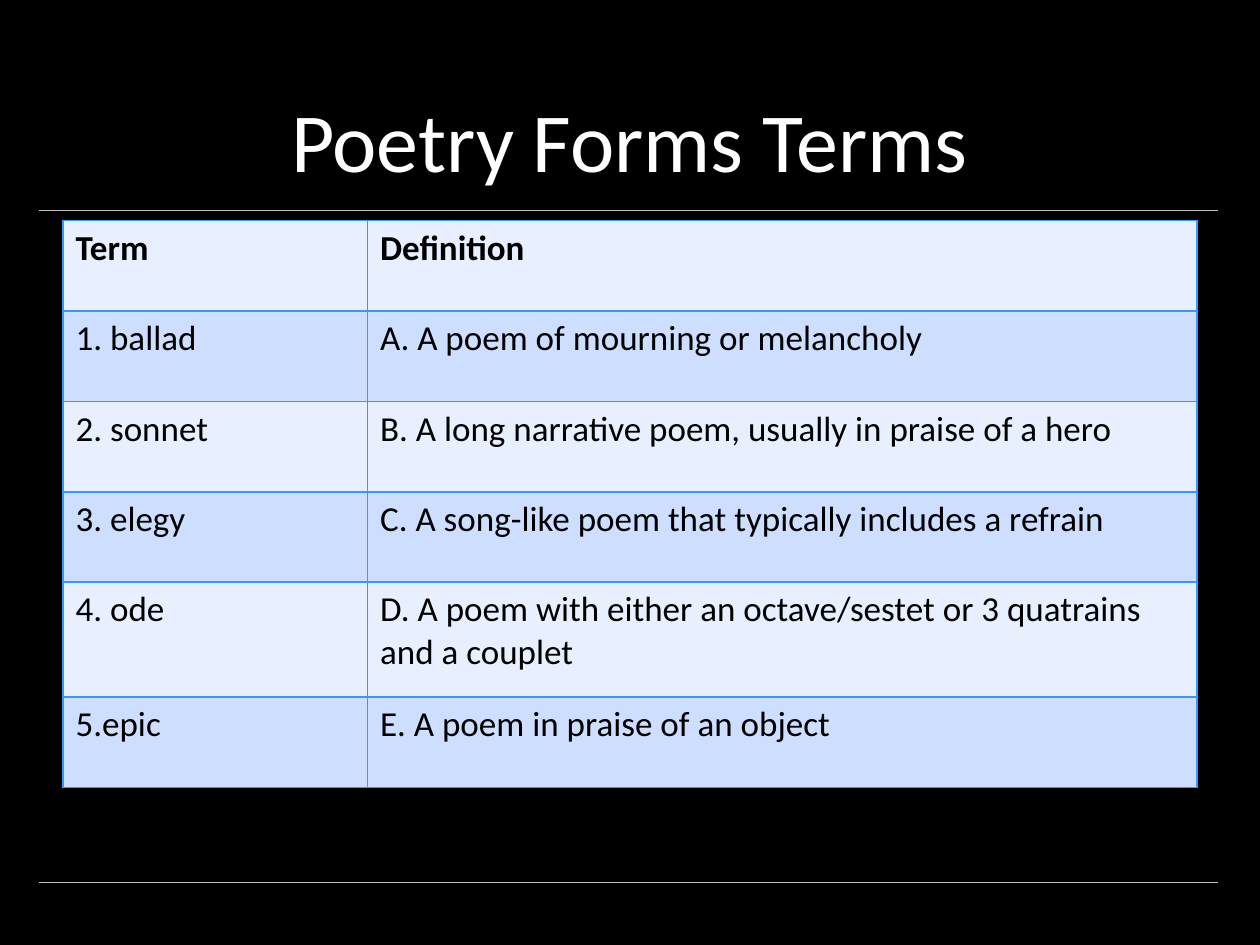
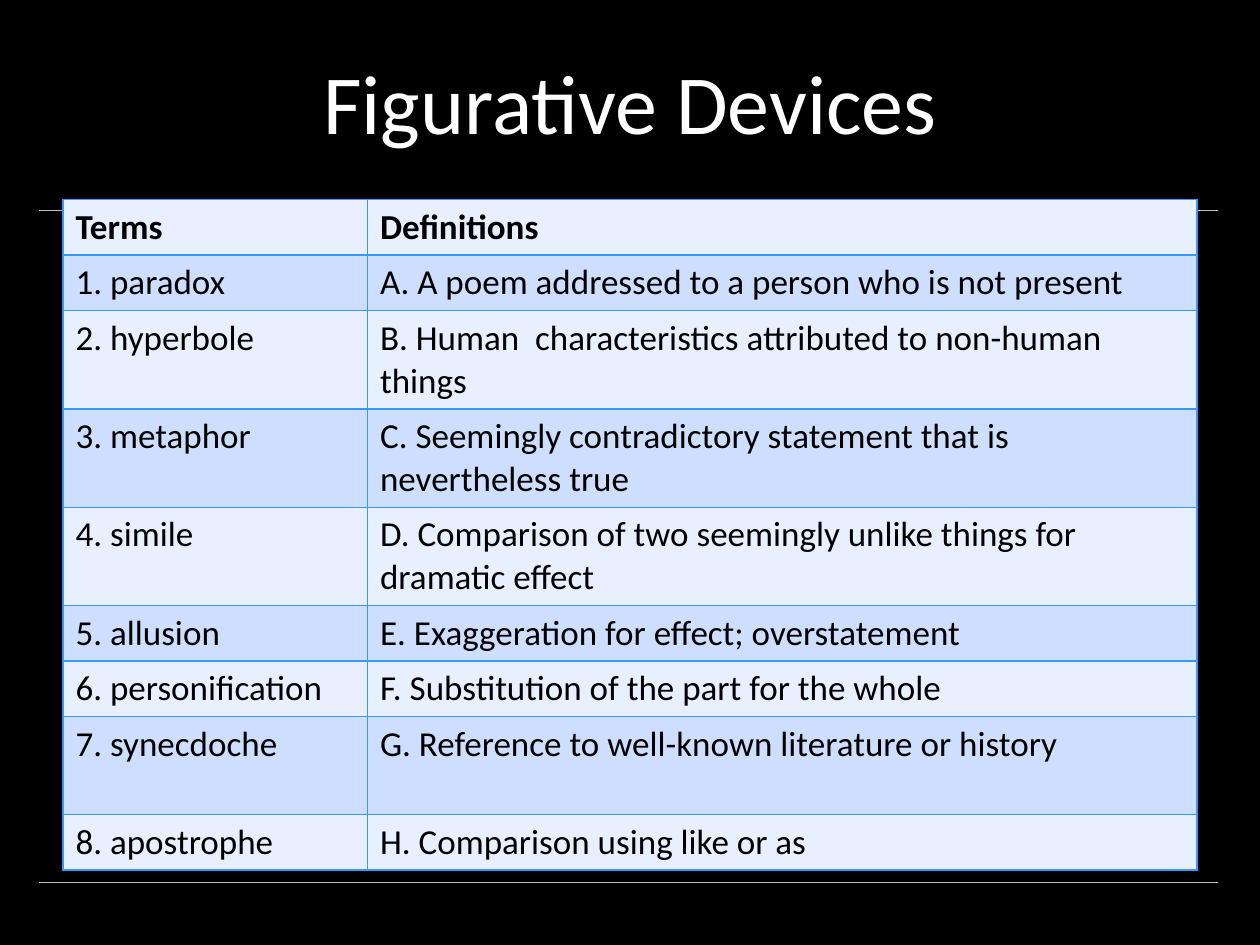
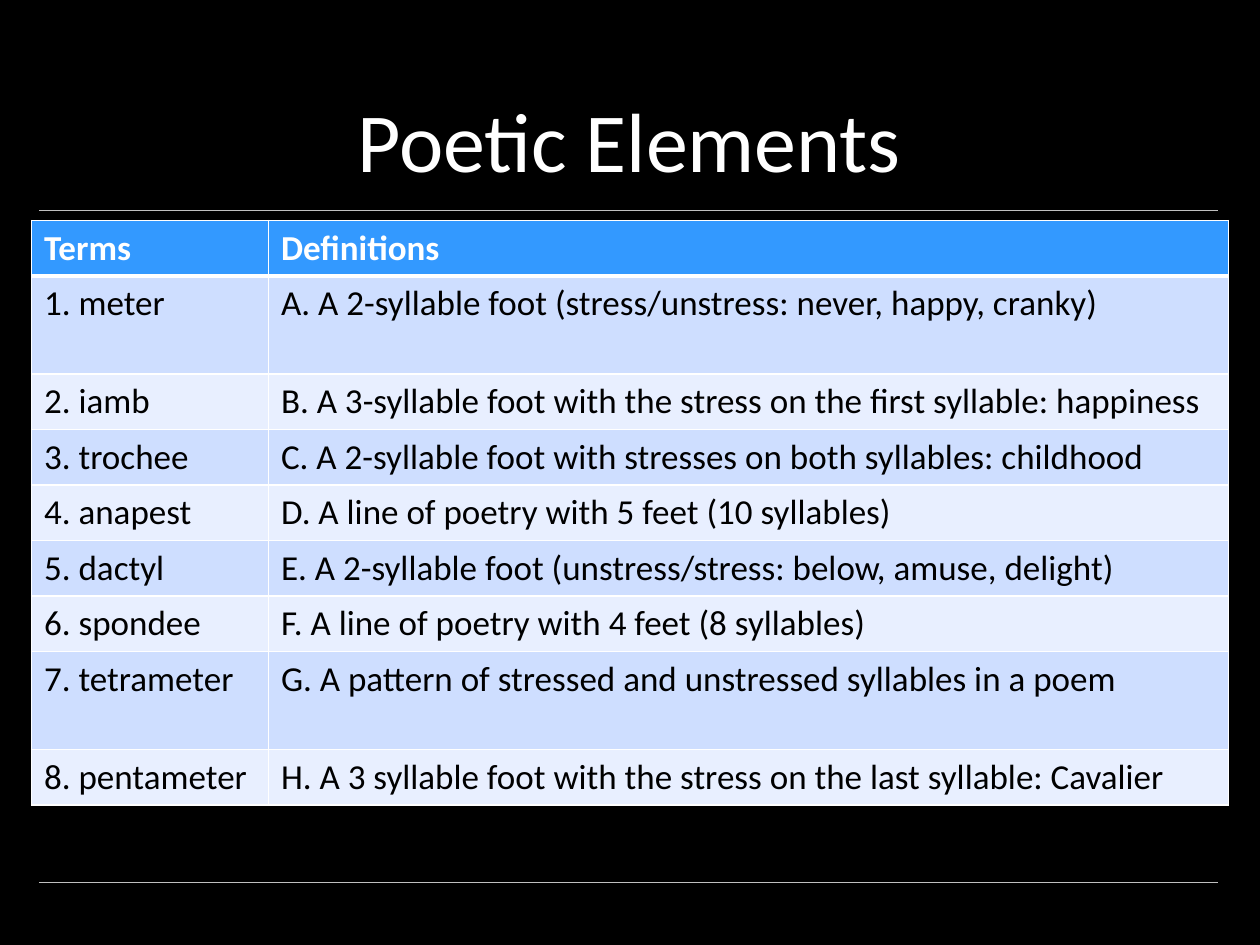
import dataclasses

import pptx
import pptx.dml.color
import pptx.enum.shapes
import pptx.enum.text
import pptx.oxml
import pptx.oxml.ns
import pptx.util
from lxml import etree

Pt = pptx.util.Pt
RGB = pptx.dml.color.RGBColor.from_string


@dataclasses.dataclass(frozen=True)
class Theme:
    font: str = "Calibri"
    title_size: int = 48
    cell_size: int = 20
    background: str = "000000"
    title: str = "FFFFFF"
    rule: str = "BFBFBF"
    text: str = "000000"
    light: str = "E8EFFF"
    mid: str = "CEDEFF"
    accent: str = "3399FF"
    white: str = "FFFFFF"


# Row heights and boxes in points; boxes are left, top, width, height
ONE_LINE, TWO_LINES = 31.7, 56
ROOMY, ROOMY_TWO_LINES = 51.7, 65.5
TITLE_BOX = (50.4, 8.64, 618.5, 103)
HIGH_TITLE_BOX = (36, 0, 648, 90)
RULE_LEFT, RULE_RIGHT = 22.3, 696.2
RULE_TOPS = (120.2, 504)

POETRY_FORMS = [
    ("Term", "Definition"),
    ("1. ballad", "A. A poem of mourning or melancholy"),
    ("2. sonnet", "B. A long narrative poem, usually in praise of a hero"),
    ("3. elegy", "C. A song-like poem that typically includes a refrain"),
    ("4. ode", "D. A poem with either an octave/sestet or 3 quatrains and a couplet"),
    ("5.epic", "E. A poem in praise of an object"),
]
FIGURATIVE_DEVICES = [
    ("Terms", "Definitions"),
    ("1. paradox", "A. A poem addressed to a person who is not present"),
    ("2. hyperbole", "B. Human  characteristics attributed to non-human things"),
    ("3. metaphor", "C. Seemingly contradictory statement that is nevertheless true"),
    ("4. simile", "D. Comparison of two seemingly unlike things for dramatic effect"),
    ("5. allusion", "E. Exaggeration for effect; overstatement"),
    ("6. personification", "F. Substitution of the part for the whole"),
    ("7. synecdoche", "G. Reference to well-known literature or history"),
    ("8. apostrophe", "H. Comparison using like or as"),
]
POETIC_ELEMENTS = [
    ("Terms", "Definitions"),
    ("1. meter", "A. A 2-syllable foot (stress/unstress: never, happy, cranky)"),
    ("2. iamb", "B. A 3-syllable foot with the stress on the first syllable: happiness"),
    ("3. trochee", "C. A 2-syllable foot with stresses on both syllables: childhood"),
    ("4. anapest", "D. A line of poetry with 5 feet (10 syllables)"),
    ("5. dactyl", "E. A 2-syllable foot (unstress/stress: below, amuse, delight)"),
    ("6. spondee", "F. A line of poetry with 4 feet (8 syllables)"),
    ("7. tetrameter", "G. A pattern of stressed and unstressed syllables in a poem"),
    ("8. pentameter", "H. A 3 syllable foot with the stress on the last syllable: Cavalier"),
]


class Deck:
    def __init__(self, theme):
        self.theme = theme
        self.slide = None
        self.prs = pptx.Presentation()
        self.prs.slide_width, self.prs.slide_height = Pt(720), Pt(540)
        fill = self.prs.slide_master.background.fill
        fill.solid()
        fill.fore_color.rgb = RGB(theme.background)

    def add_slide(self, title, box=TITLE_BOX):
        self.slide = self.prs.slides.add_slide(self.prs.slide_layouts[5])
        for top in RULE_TOPS:
            self.rule(top)
        self.title(title, box)

    def title(self, text, box):
        sp = self.slide.shapes.title
        sp.left, sp.top, sp.width, sp.height = map(Pt, box)
        tf = sp.text_frame
        tf.text = text
        tf.vertical_anchor = pptx.enum.text.MSO_ANCHOR.BOTTOM
        p = tf.paragraphs[0]
        p.alignment = pptx.enum.text.PP_ALIGN.CENTER
        self.style(p, self.theme.title_size, self.theme.title)

    def rule(self, top):
        line = self.slide.shapes.add_connector(
            pptx.enum.shapes.MSO_CONNECTOR.STRAIGHT,
            Pt(RULE_LEFT), Pt(top), Pt(RULE_RIGHT), Pt(top))
        line.line.color.rgb = RGB(self.theme.rule)
        line.line.width = Pt(0.25)
        sp_pr = line.element.find(pptx.oxml.ns.qn("p:spPr"))
        etree.SubElement(sp_pr, pptx.oxml.ns.qn("a:effectLst"))

    def style(self, p, size, color, bold=False):
        p.font.name = self.theme.font
        p.font.size = Pt(size)
        p.font.bold = bold
        p.font.color.rgb = RGB(color)

    def table(self, rows, left, top, widths, heights, border, solid_header=False):
        """Draw a two-tone table; solid_header gives the first row the accent fill."""
        theme = self.theme
        table = self.slide.shapes.add_table(
            len(rows), len(widths), Pt(left), Pt(top),
            Pt(sum(widths)), Pt(sum(heights))).table
        table.first_row = table.horz_banding = False
        for column, width in zip(table.columns, widths):
            column.width = Pt(width)
        for i, (row, height, texts) in enumerate(zip(table.rows, heights, rows)):
            row.height = Pt(height)
            accented = solid_header and i == 0
            fill = theme.accent if accented else (theme.light, theme.mid)[i % 2]
            color = theme.white if accented else theme.text
            edges = {"L": 1, "R": 1,
                     "T": 3 if solid_header and i == 1 else 1,
                     "B": 3 if accented else 1}
            for cell, text in zip(row.cells, texts):
                cell.text = text
                self.style(cell.text_frame.paragraphs[0], theme.cell_size, color, i == 0)
                self.borders(cell, edges, border)
                cell.fill.solid()
                cell.fill.fore_color.rgb = RGB(fill)

    def borders(self, cell, edges, color):
        qn = pptx.oxml.ns.qn
        tc_pr = cell._tc.get_or_add_tcPr()
        for side, width in edges.items():
            ln = etree.SubElement(tc_pr, qn(f"a:ln{side}"), w=str(Pt(width)))
            solid = etree.SubElement(ln, qn("a:solidFill"))
            etree.SubElement(solid, qn("a:srgbClr"), val=color)


def heights_with(count, usual, special, special_rows):
    return [special if i in special_rows else usual for i in range(count)]


def main():
    theme = Theme()
    deck = Deck(theme)
    columns = (174, 474)

    deck.add_slide("Poetry Forms Terms")
    deck.table(POETRY_FORMS, 36, 126, columns,
               heights_with(len(POETRY_FORMS), ROOMY, ROOMY_TWO_LINES, {4}), theme.accent)

    deck.add_slide("Figurative Devices", HIGH_TITLE_BOX)
    deck.table(FIGURATIVE_DEVICES, 36, 114, columns,
               heights_with(len(FIGURATIVE_DEVICES), ONE_LINE, TWO_LINES, {2, 3, 4, 7}),
               theme.accent)

    deck.add_slide("Poetic Elements")
    deck.table(POETIC_ELEMENTS, 18, 126, (135.4, 548.6),
               heights_with(len(POETIC_ELEMENTS), ONE_LINE, TWO_LINES, {1, 7}),
               theme.white, solid_header=True)

    deck.prs.save("out.pptx")


if __name__ == "__main__":
    main()
